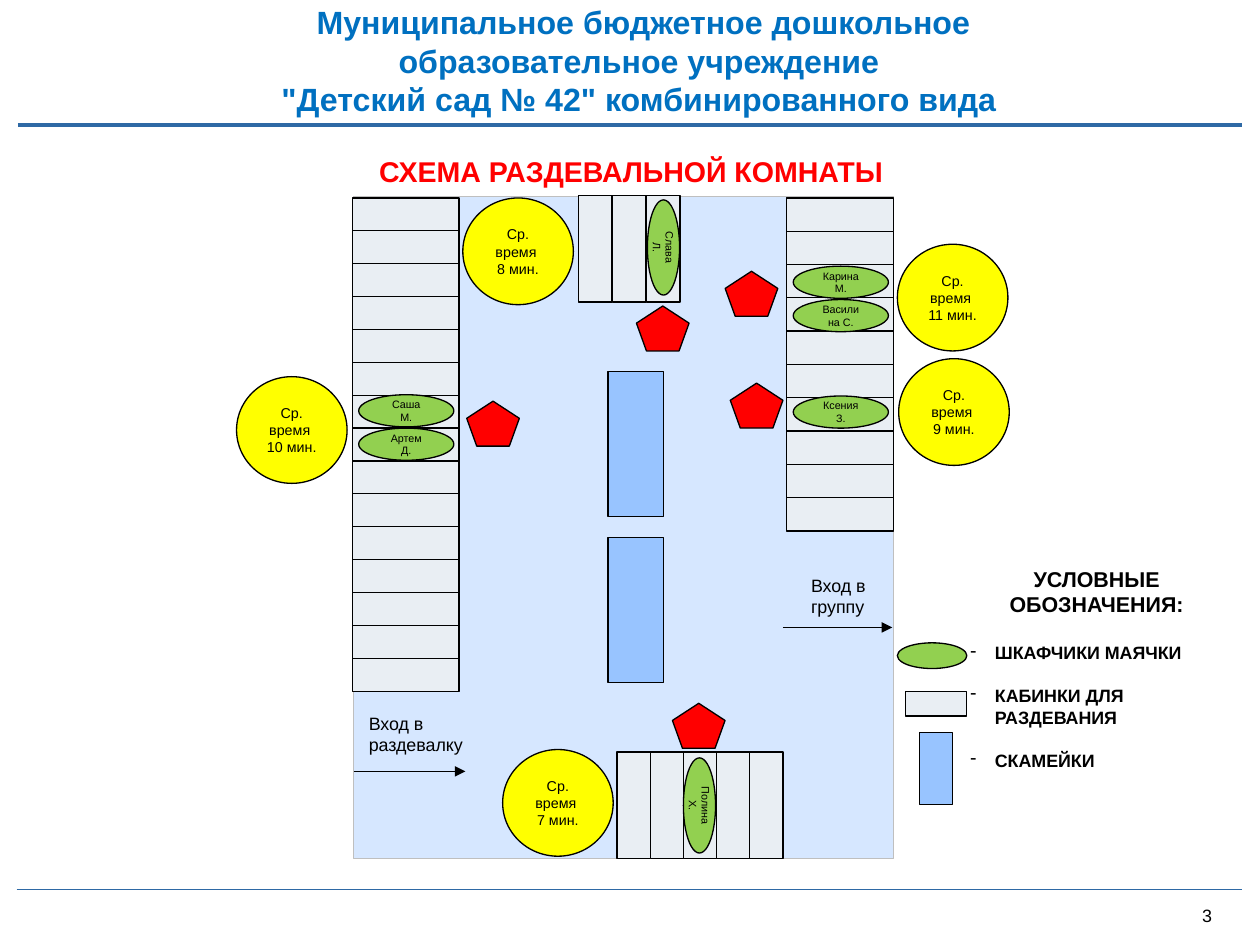
import pptx
import pptx.util
import pptx.dml.color
import pptx.enum.shapes
import pptx.enum.text
import pptx.oxml
import pptx.oxml.ns

Inches = pptx.util.Inches
Pt = pptx.util.Pt
Kind = pptx.enum.shapes.MSO_SHAPE
Align = pptx.enum.text.PP_ALIGN
Anchor = pptx.enum.text.MSO_ANCHOR

COLORS = {
    "title": "0070C0", "heading": "FF0000", "text": "000000", "outline": "000000",
    "rule": "2E69A5", "room": "D6E7FF", "room edge": "BFBFBF", "bench": "98C4FF",
    "locker": "E9EEF3", "child": "FF0000", "beacon": "92D050", "time": "FFFF00",
}
COLORS = {name: pptx.dml.color.RGBColor.from_string(value) for name, value in COLORS.items()}

deck = pptx.Presentation()
deck.slide_width, deck.slide_height = Inches(9.8), Inches(7.35)
page = deck.slides.add_slide(deck.slide_layouts[5])


def write(frame, lines, size, color="text", bold=False, align=Align.CENTER):
    frame.word_wrap = True
    frame.text = "\n".join(lines)
    font_values = {"name": "Arial", "size": Pt(size), "bold": bold}
    for para in frame.paragraphs:
        para.alignment = align
        for span in para.runs:
            for key, value in font_values.items():
                setattr(span.font, key, value)
            span.font.color.rgb = COLORS[color]


def draw(kind, left, top, width, height, fill, edge="outline"):
    shape = page.shapes.add_shape(kind, Inches(left), Inches(top), Inches(width), Inches(height))
    shape.shadow.inherit = False
    shape.fill.solid()
    shape.fill.fore_color.rgb = COLORS[fill]
    shape.line.color.rgb = COLORS[edge]
    shape.line.width = Pt(0.75)
    return shape


title = page.shapes.title
title.left, title.top, title.width, title.height = map(Inches, (1.35, -0.03, 7.31, 0.96))
title.text_frame.auto_size = pptx.enum.text.MSO_AUTO_SIZE.NONE
title.text_frame.vertical_anchor = Anchor.TOP
write(title.text_frame,
      ["Муниципальное бюджетное дошкольное образовательное учреждение \v"
       "\"Детский сад № 42\" комбинированного вида "],
      18, "title", True)

draw(Kind.RECTANGLE, 2.75, 1.53, 4.2, 5.15, "room", "room edge")
for top in (2.89, 4.18):
    draw(Kind.RECTANGLE, 4.73, top, 0.43, 1.13, "bench")

for left, first, last, count in ((2.74, 1.54, 5.12, 15), (6.12, 1.54, 3.87, 10)):
    for index in range(count):
        top = first + index * (last - first) / (count - 1)
        draw(Kind.RECTANGLE, left, top, 0.83, 0.26, "locker")
for top, first, last, count in ((1.52, 4.5, 5.03, 3), (5.85, 4.8, 5.83, 5)):
    for index in range(count):
        left = first + index * (last - first) / (count - 1)
        draw(Kind.RECTANGLE, left, top, 0.26, 0.83, "locker")

for left, top in ((4.95, 2.38), (3.63, 3.12), (5.23, 5.47), (5.64, 2.11), (5.68, 2.98)):
    draw(Kind.REGULAR_PENTAGON, left, top, 0.41, 0.35, "child")

beacons = [
    ("Саша М.", 2.79, 3.07, 0), ("Артем Д.", 2.79, 3.33, 0),
    ("Полина Х.", 5.07, 6.14, 90), ("Ксения З.", 6.17, 3.08, 0),
    ("Василина С.", 6.17, 2.33, 0), ("Карина М.", 6.17, 2.07, 0),
    ("Слава Л.", 4.79, 1.8, 90),
]
for name, left, top, turn in beacons:
    beacon = draw(Kind.OVAL, left, top, 0.74, 0.25, "beacon")
    beacon.rotation = turn
    beacon.text_frame.vertical_anchor = Anchor.MIDDLE
    write(beacon.text_frame, [name], 6)

times = [(10, 1.84, 2.93), (11, 6.98, 1.9), (9, 6.99, 2.79), (7, 3.91, 5.83), (8, 3.6, 1.54)]
for minutes, left, top in times:
    circle = draw(Kind.OVAL, left, top, 0.86, 0.83, "time")
    circle.text_frame.vertical_anchor = Anchor.MIDDLE
    write(circle.text_frame, ["Ср. время ", f"{minutes} мин."], 8)

lines = [
    (0.13, 9.66, 6.92, "rule", 0.75, False), (0.14, 9.66, 0.97, "rule", 2.25, False),
    (2.75, 3.62, 6, "outline", 0.75, True), (6.09, 6.94, 4.88, "outline", 0.75, True),
]
for start, end, height, color, weight, arrow in lines:
    line = page.shapes.add_connector(pptx.enum.shapes.MSO_CONNECTOR.STRAIGHT,
                                     Inches(start), Inches(height), Inches(end), Inches(height))
    line.line.color.rgb = COLORS[color]
    line.line.width = Pt(weight)
    if arrow:
        head = pptx.oxml.parse_xml(f'<a:tailEnd {pptx.oxml.ns.nsdecls("a")} type="triangle"/>')
        line.line._get_or_add_ln().append(head)
    line._element.spPr.append(pptx.oxml.parse_xml(f'<a:effectLst {pptx.oxml.ns.nsdecls("a")}/>'))

labels = [
    ("СХЕМА РАЗДЕВАЛЬНОЙ КОМНАТЫ", 2.46, 1.15, 4.9, 0.37, 16, "heading", True, Align.CENTER),
    ("Вход в группу", 6.21, 4.42, 0.64, 0.44, 10, "text", False, Align.LEFT),
    ("Вход в раздевалку", 2.77, 5.49, 1.03, 0.44, 10, "text", False, Align.LEFT),
]
for text, left, top, width, height, *style in labels:
    box = page.shapes.add_textbox(Inches(left), Inches(top), Inches(width), Inches(height))
    write(box.text_frame, [text], *style)

number = page.shapes.add_textbox(Inches(9.35), Inches(7.04), Inches(0.23), Inches(0.17))
write(number.text_frame, ["3"], 10, align=Align.LEFT)
for side in ("left", "top", "right", "bottom"):
    setattr(number.text_frame, f"margin_{side}", 0)

legend = page.shapes.add_textbox(Inches(7.45), Inches(4.35), Inches(2.16), Inches(1.72))
write(legend.text_frame,
      ["УСЛОВНЫЕ ОБОЗНАЧЕНИЯ:", "ШКАФЧИКИ МАЯЧКИ", "КАБИНКИ ДЛЯ РАЗДЕВАНИЯ", "СКАМЕЙКИ"],
      10, bold=True, align=Align.LEFT)
heading, *entries = legend.text_frame.paragraphs
heading.alignment = Align.CENTER
heading.runs[0].font.size = Pt(12)
for para, gap in zip(entries, (14, 12, 12)):
    para.space_before = Pt(gap)
    settings = para._p.get_or_add_pPr()
    settings.set("marL", str(Inches(0.19)))
    settings.set("indent", str(-Inches(0.19)))
    settings.append(pptx.oxml.parse_xml(f'<a:buChar {pptx.oxml.ns.nsdecls("a")} char="-"/>'))

draw(Kind.RECTANGLE, 7.15, 5.7, 0.26, 0.56, "bench")
draw(Kind.RECTANGLE, 7.04, 5.38, 0.48, 0.19, "locker")
draw(Kind.OVAL, 6.98, 5, 0.54, 0.2, "beacon")

deck.save("out.pptx")
